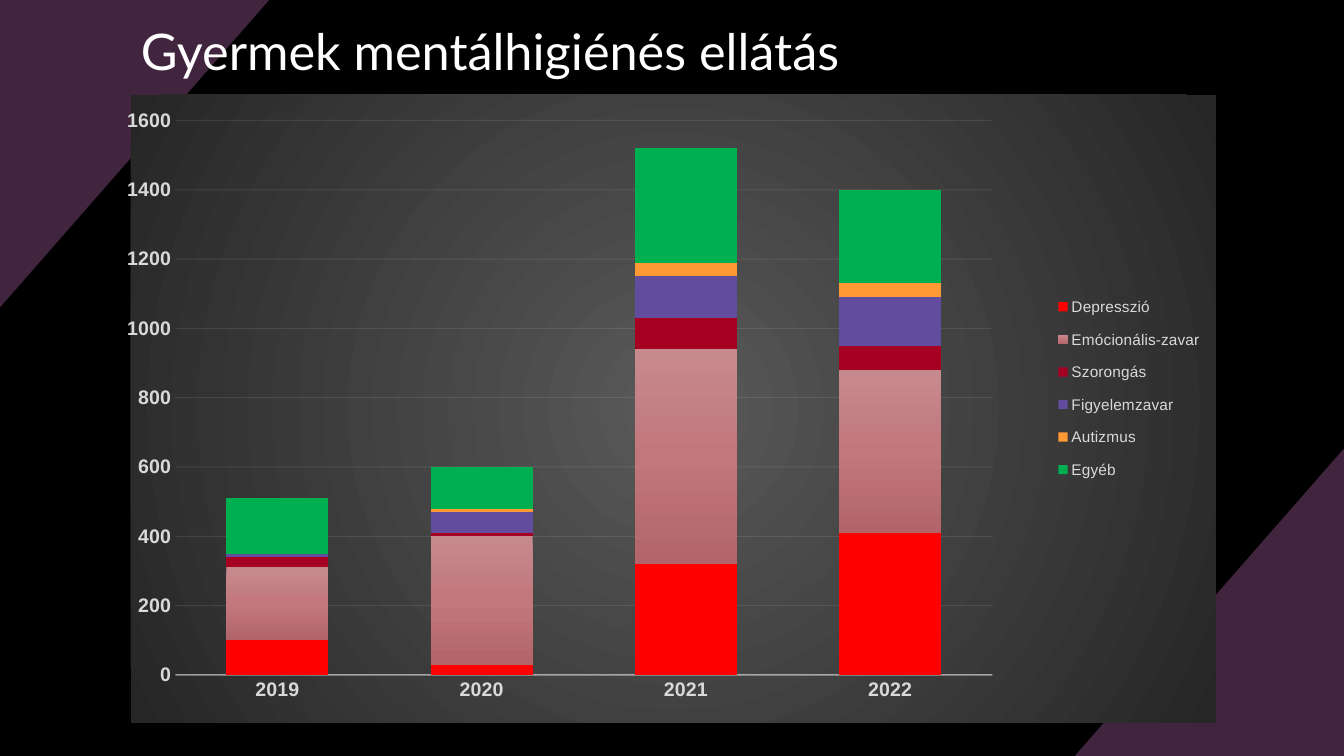
from lxml import etree
from pptx import Presentation
from pptx.chart.data import CategoryChartData
from pptx.dml.color import RGBColor
from pptx.enum.chart import XL_CHART_TYPE, XL_LEGEND_POSITION, XL_TICK_MARK
from pptx.enum.text import MSO_ANCHOR
from pptx.oxml import parse_xml
from pptx.oxml.ns import nsdecls, qn
from pptx.util import Inches, Pt

STACKED = XL_CHART_TYPE.COLUMN_STACKED
LEGEND_BOTTOM = XL_LEGEND_POSITION.BOTTOM
NO_TICK = XL_TICK_MARK.NONE
MIDDLE = MSO_ANCHOR.MIDDLE

THEME = {
    "background": "000000", "corner": "41243E", "title": "FFFFFF",
    "label": "D9D9D9", "rule": "F2F2F2",
    "panel": [(0, "595959"), (100, "262626")],
    "title_font": "Lato", "chart_font": "Arial",
    "title_size": 36, "axis_size": 14, "legend_size": 11, "base_size": 10,
}


def write_text(box, text, font, size, color):
    frame = box.text_frame
    frame.word_wrap = True
    frame.vertical_anchor = MIDDLE
    run = frame.paragraphs[0].add_run()
    run.text = text
    run.font.name = font
    run.font.size = Pt(size)
    run.font.color.rgb = RGBColor.from_string(color)


def gradient(stops, direction):
    marks = "".join(
        f'<a:gs pos="{share * 1000}"><a:srgbClr val="{color}"/></a:gs>'
        for share, color in stops)
    return parse_xml(f'<a:gradFill {nsdecls("a")} rotWithShape="1">'
                     f'<a:gsLst>{marks}</a:gsLst>{direction}</a:gradFill>')


prs = Presentation()
prs.slide_width, prs.slide_height = Inches(13.33), Inches(7.5)
width, height = prs.slide_width, prs.slide_height
slide = prs.slides.add_slide(prs.slide_layouts[6])
slide.background.fill.solid()
slide.background.fill.fore_color.rgb = RGBColor.from_string(THEME["background"])

corner_width, corner_height = Inches(2.67), Inches(3.05)
for corner_x, corner_y, inward in [(width, height, -1), (0, 0, 1)]:
    outline = slide.shapes.build_freeform(corner_x, corner_y + inward * corner_height)
    outline.add_line_segments([(corner_x, corner_y),
                               (corner_x + inward * corner_width, corner_y)])
    corner = outline.convert_to_shape()
    corner.shadow.inherit = False
    corner.fill.solid()
    corner.fill.fore_color.rgb = RGBColor.from_string(THEME["corner"])
    corner.line.fill.background()

title = slide.shapes.add_textbox(Inches(1.3), Inches(0.16), Inches(10.49), Inches(0.67))
write_text(title, "Gyermek mentálhigiénés ellátás", font=THEME["title_font"],
           size=THEME["title_size"], color=THEME["title"])

diagnoses = [
    ("Depresszió", [100, 30, 320, 410], "FF0000"),
    ("Emócionális-zavar", [210, 370, 620, 470],
     [(0, "C68A8E"), (50, "C2777C"), (100, "B1656B")]),
    ("Szorongás", [30, 10, 90, 70], "A50021"),
    ("Figyelemzavar", [10, 60, 120, 140], "614C9E"),
    ("Autizmus", [0, 10, 40, 40], "FF9933"),
    ("Egyéb", [160, 120, 330, 270], "00B050"),
]
cases = CategoryChartData()
cases.categories = ["2019", "2020", "2021", "2022"]
for diagnosis, counts, _ in diagnoses:
    cases.add_series(diagnosis, counts)

chart = slide.shapes.add_chart(STACKED, Inches(1.26), Inches(0.94),
                               Inches(10.8), Inches(6.23), cases).chart
chart.has_title = False
chart.font.name = THEME["chart_font"]
chart.font.size = Pt(THEME["base_size"])

columns = chart.plots[0]
columns.gap_width = 100
columns.overlap = 100
columns.vary_by_categories = False
for series, (_, _, color) in zip(columns.series, diagnoses):
    series.invert_if_negative = False
    if isinstance(color, list):
        series.format.line.fill.background()
        series._element.get_or_add_spPr().insert(
            0, gradient(color, '<a:lin ang="5400000" scaled="0"/>'))
    else:
        series.format.fill.solid()
        series.format.fill.fore_color.rgb = RGBColor.from_string(color)

years, amounts = chart.category_axis, chart.value_axis
chart.has_legend = True
legend = chart.legend
legend.position = LEGEND_BOTTOM
legend.include_in_layout = False

for labels, size, bold in [(years.tick_labels.font, THEME["axis_size"], True),
                           (amounts.tick_labels.font, THEME["axis_size"], True),
                           (legend.font, THEME["legend_size"], False)]:
    labels.name = THEME["chart_font"]
    labels.size = Pt(size)
    labels.bold = bold
    labels.color.rgb = RGBColor.from_string(THEME["label"])

for axis in (years, amounts):
    axis.major_tick_mark = axis.minor_tick_mark = NO_TICK
amounts.minimum_scale, amounts.maximum_scale, amounts.major_unit = 0, 1600, 200
amounts.has_major_gridlines = True
amounts.format.line.fill.background()

for rule, weight, opacity in [(years.format.line, 1, 54),
                              (amounts.major_gridlines.format.line, 0.75, 10)]:
    rule.width = Pt(weight)
    rule.color.rgb = RGBColor.from_string(THEME["rule"])
    tint = rule.fill._xPr.find(".//" + qn("a:srgbClr"))
    etree.SubElement(tint, qn("a:alpha"), val=str(opacity * 1000))

chart_space = chart._chartSpace
panel = parse_xml(f'<c:spPr {nsdecls("c", "a")}><a:ln><a:noFill/></a:ln></c:spPr>')
panel.insert(0, gradient(THEME["panel"],
                         '<a:path path="circle"><a:fillToRect l="50000" t="50000" '
                         'r="50000" b="50000"/></a:path>'))
chart_space.find(qn("c:chart")).addnext(panel)

plot_area = chart_space.find(".//" + qn("c:plotArea"))
for part, position, target, shares in [
        (plot_area, 0, '<c:layoutTarget val="inner"/>', (0.041, 0.041, 0.753, 0.883)),
        (legend._element, 1, "", (0.845, 0.3, 0.15, 0.335))]:
    for former in part.findall(qn("c:layout")):
        part.remove(former)
    sizes = "".join(f'<c:{key} val="{share}"/>' for key, share in zip("xywh", shares))
    part.insert(position, parse_xml(
        f'<c:layout {nsdecls("c")}><c:manualLayout>{target}<c:xMode val="edge"/>'
        f'<c:yMode val="edge"/>{sizes}</c:manualLayout></c:layout>'))

prs.save("out.pptx")
